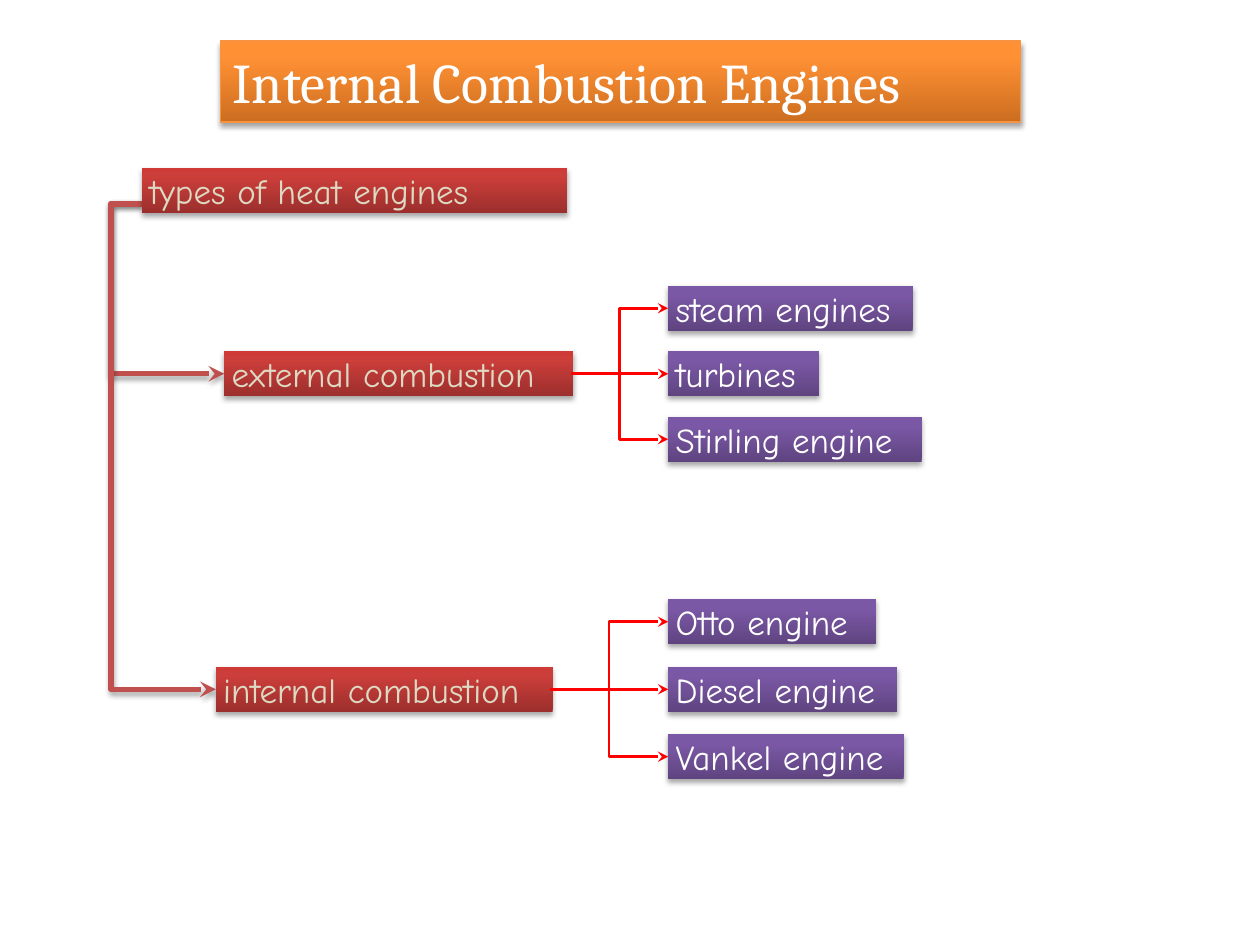
from copy import deepcopy
from dataclasses import dataclass

from lxml.etree import SubElement
from pptx import Presentation
from pptx.dml.color import RGBColor as Rgb
from pptx.enum.shapes import MSO_CONNECTOR as Route, MSO_SHAPE as Preset
from pptx.enum.text import MSO_ANCHOR as Anchor, MSO_AUTO_SIZE as AutoSize, PP_ALIGN as Align
from pptx.oxml.ns import qn
from pptx.util import Cm, Pt


@dataclass(frozen=True)
class Theme:
    title_fill: tuple = ("CC6E20", "FF9034", "FF9136")
    title_border: str = "F69240"
    family_fill: tuple = ("9C2F2D", "CB3E3A", "CE3B37")
    engine_fill: tuple = ("5F4480", "7B58A6", "7C57A8")
    trunk: str = "C0504D"
    branch: str = "FF0000"
    white: str = "FFFFFF"
    sand: str = "DDD9C3"
    title_font: str = "Cambria"
    label_font: str = "Comic Neue"
    title_size: int = 32
    label_size: int = 20
    label_height: float = 0.91


class Diagram:
    def __init__(self, slide, theme):
        self.slide = slide
        self.theme = theme

    def shadow(self, effects):
        outer = SubElement(effects, qn("a:outerShdw"), blurRad=str(Pt(3.1)), dist=str(Pt(1.8)),
                           dir="5400000", rotWithShape="0")
        black = SubElement(outer, qn("a:srgbClr"), val="000000")
        SubElement(black, qn("a:alpha"), val="35000")

    def box(self, text, left, top, width, height, colours, ink, font, size, insets):
        box = self.slide.shapes.add_shape(Preset.RECTANGLE, Cm(left), Cm(top), Cm(width), Cm(height))
        box.fill.gradient()
        box.fill.gradient_angle = 90
        stops = box._element.spPr.find(".//" + qn("a:gsLst"))
        stops.append(deepcopy(stops[-1]))
        for stop, position, colour in zip(box.fill.gradient_stops, (0, 0.8, 1), colours):
            stop.position = position
            stop.color.rgb = Rgb.from_string(colour)
        box.line.fill.background()
        box.shadow.inherit = False
        self.shadow(box._element.spPr.find(qn("a:effectLst")))

        frame = box.text_frame
        frame.text = text
        frame.word_wrap = True
        frame.auto_size = AutoSize.SHAPE_TO_FIT_TEXT
        frame.vertical_anchor = Anchor.TOP
        frame.margin_left = frame.margin_right = Cm(insets[0])
        frame.margin_top = frame.margin_bottom = Cm(insets[1])
        paragraph = frame.paragraphs[0]
        paragraph.alignment = Align.LEFT
        style = paragraph.runs[0].font
        style.name, style.size = font, Pt(size)
        style.color.rgb = Rgb.from_string(ink)
        return box

    def title(self, text, left, top, width, height):
        theme = self.theme
        banner = self.box(text, left, top, width, height, theme.title_fill, theme.white,
                          theme.title_font, theme.title_size, (0.25, 0.13))
        banner.line.color.rgb = Rgb.from_string(theme.title_border)
        banner.line.width = Pt(0.75)

    def label(self, text, left, top, width, colours, ink):
        return self.box(text, left, top, width, self.theme.label_height, colours, ink,
                        self.theme.label_font, self.theme.label_size, (0.15, 0.03))

    def family(self, text, left, top, width):
        return self.label(text, left, top, width, self.theme.family_fill, self.theme.sand)

    def engine(self, text, left, top, width):
        return self.label(text, left, top, width, self.theme.engine_fill, self.theme.white)

    def arrow(self, route, start, end, colour, weight):
        arrow = self.slide.shapes.add_connector(route, *map(Cm, start + end))
        arrow.line.color.rgb = Rgb.from_string(colour)
        arrow.line.width = Pt(weight)
        SubElement(arrow.line._get_or_add_ln(), qn("a:tailEnd"), type="stealth")
        return arrow, SubElement(arrow._element.spPr, qn("a:effectLst"))

    def trunk(self, start, end, spine):
        arrow, effects = self.arrow(Route.ELBOW, start, end, self.theme.trunk, 3)
        self.shadow(effects)
        bend = round((spine - start[0]) / (end[0] - start[0]) * 100000)
        guides = arrow._element.spPr.find(qn("a:prstGeom")).get_or_add_avLst()
        SubElement(guides, qn("a:gd"), name="adj1", fmla=f"val {bend}")

    def branch(self, start, end, family, engine):
        straight = start[1] == end[1]
        route = Route.STRAIGHT if straight else Route.ELBOW
        arrow, _ = self.arrow(route, start, end, self.theme.branch, 1.5)
        if straight:
            arrow.begin_connect(family, 3)
            arrow.end_connect(engine, 1)


FAMILIES = (
    ("external combustion", 4.52, 7.08, 7.04, 1.32,
     (("steam engines", 4.93), ("turbines", 3.05), ("Stirling engine", 5.11))),
    ("internal combustion", 4.35, 13.44, 6.79, 1.36,
     (("Otto engine", 4.19), ("Diesel engine", 4.62), ("Vankel engine", 4.75))),
)
ENGINE_LEFT = 13.47
ROOT_LEFT, ROOT_EXIT, SPINE = 2.86, 4.11, 2.24
OVERLAP = 0.05


def main():
    deck = Presentation()
    deck.slide_width, deck.slide_height = Cm(25.4), Cm(19.05)
    theme = Theme()
    diagram = Diagram(deck.slides.add_slide(deck.slide_layouts[6]), theme)
    half = theme.label_height / 2

    for _, left, top, *_ in FAMILIES:
        diagram.trunk((ROOT_LEFT, ROOT_EXIT), (left, top + half), SPINE)
    diagram.family("types of heat engines", ROOT_LEFT, 3.38, 8.57)

    for name, left, top, width, pitch, engines in FAMILIES:
        family = diagram.family(name, left, top, width)
        exit_point = (left + width - OVERLAP, top + half)
        for row, (engine_name, engine_width) in enumerate(engines, start=-1):
            engine_top = top + row * pitch
            engine = diagram.engine(engine_name, ENGINE_LEFT, engine_top, engine_width)
            diagram.branch(exit_point, (ENGINE_LEFT, engine_top + half), family, engine)

    diagram.title("Internal Combustion Engines", 4.44, 0.83, 16.13, 1.63)
    deck.save("out.pptx")


if __name__ == "__main__":
    main()
